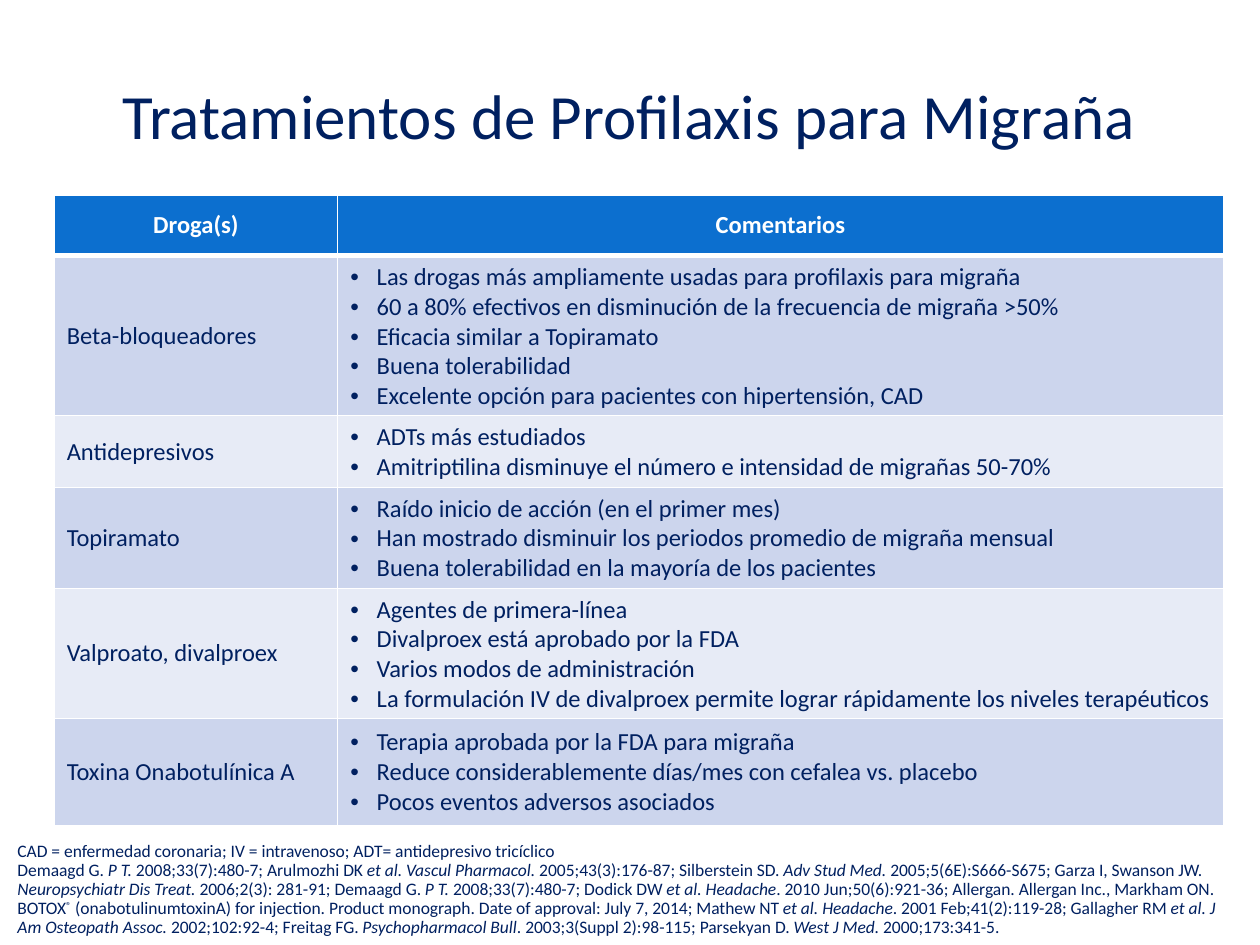
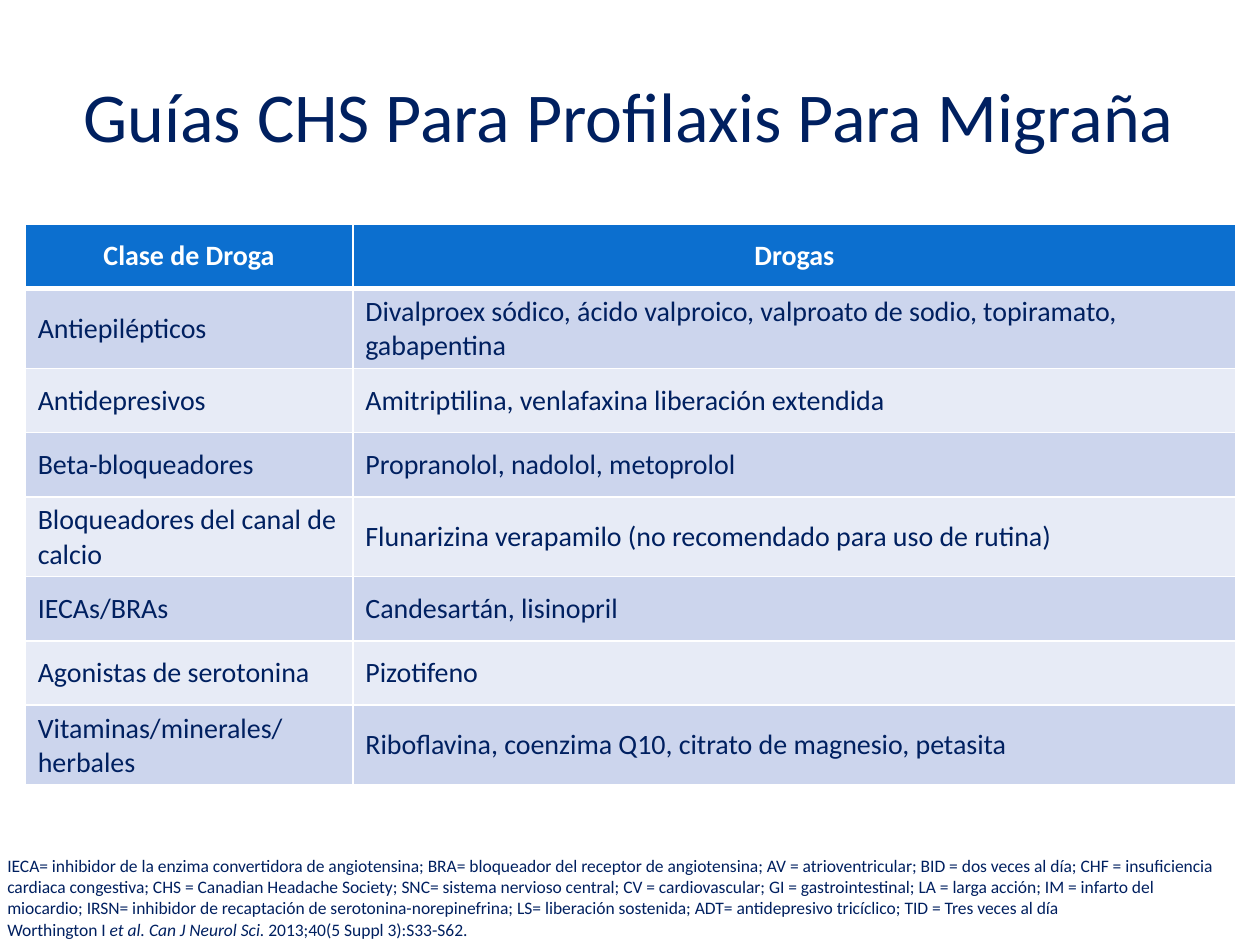
from lxml import etree
from pptx import Presentation
from pptx.dml.color import RGBColor
from pptx.enum.text import MSO_ANCHOR, PP_ALIGN
from pptx.oxml.ns import qn
from pptx.util import Inches, Pt

FONT = "Calibri"
NAVY = RGBColor(0x00, 0x20, 0x60)
WHITE = RGBColor(0xFF, 0xFF, 0xFF)
HEADER_BLUE = RGBColor(0x0C, 0x6F, 0xCF)
BANDS = [RGBColor(0xCC, 0xD5, 0xED), RGBColor(0xE7, 0xEB, 0xF6)]
TITLE_BOX = (0.49, 0.28, 9, 1.25)
BULLET_INDENT = 0.21
NOTE_SIZE = 10

# In notes, asterisks delimit italic text.
TREATMENTS = {
    "title": "Tratamientos de Profilaxis para Migraña",
    "title_size": 36,
    "table_at": (0.43, 1.55),
    "columns": [2.25, 7.03],
    "row_heights": [0.48, 1.27, 0.57, 0.8, 1.03, 0.85],
    "table_size": 14,
    "header": ("Droga(s)", "Comentarios"),
    "rows": [
        ("Beta-bloqueadores", [
            "Las drogas más ampliamente usadas para profilaxis para migraña",
            "60 a 80% efectivos en disminución de la frecuencia de migraña >50%",
            "Eficacia similar a Topiramato",
            "Buena tolerabilidad",
            "Excelente opción para pacientes con hipertensión, CAD",
        ]),
        ("Antidepresivos", [
            "ADTs más estudiados",
            "Amitriptilina disminuye el número e intensidad de migrañas 50-70%",
        ]),
        ("Topiramato", [
            "Raído inicio de acción (en el primer mes)",
            "Han mostrado disminuir los periodos promedio de migraña mensual",
            "Buena tolerabilidad en la mayoría de los pacientes",
        ]),
        ("Valproato, divalproex", [
            "Agentes de primera-línea",
            "Divalproex está aprobado por la FDA",
            "Varios modos de administración",
            "La formulación IV de divalproex permite lograr rápidamente los niveles terapéuticos",
        ]),
        ("Toxina Onabotulínica A", [
            "Terapia aprobada por la FDA para migraña",
            "Reduce considerablemente días/mes con cefalea vs. placebo",
            "Pocos eventos adversos asociados",
        ]),
    ],
    "note_box": (0.04, 6.64, 9.85, 0.86),
    "note_spacing": 0.9,
    "notes": [
        "CAD = enfermedad coronaria; IV = intravenoso; ADT= antidepresivo tricíclico",
        "Demaagd G. *P T.* 2008;33(7):480-7; Arulmozhi DK *et al. Vascul Pharmacol.* "
        "2005;43(3):176-87; Silberstein SD. *Adv Stud Med. *2005;5(6E):S666-S675; "
        "Garza I, Swanson JW. *Neuropsychiatr Dis Treat.* 2006;2(3): 281-91; "
        "Demaagd G. *P T.* 2008;33(7):480-7; Dodick DW *et al. Headache*. "
        "2010 Jun;50(6):921-36; Allergan. Allergan Inc., Markham ON. "
        "BOTOX® (onabotulinumtoxinA) for injection. Product monograph. "
        "Date of approval: July 7, 2014; Mathew NT *et al. Headache*. "
        "2001 Feb;41(2):119-28; Gallagher RM *et al. J Am Osteopath Assoc. *"
        "2002;102:92-4; Freitag FG. *Psychopharmacol Bull*. "
        "2003;3(Suppl 2):98-115; Parsekyan D. *West J Med. *2000;173:341-5.",
    ],
}

GUIDELINES = {
    "title": "Guías CHS Para Profilaxis Para Migraña",
    "title_size": 40,
    "table_at": (0.2, 1.78),
    "columns": [2.6, 7.01],
    "row_heights": [0.51] * 8,
    "table_size": 16,
    "header": ("Clase de Droga", "Drogas"),
    "rows": [
        ("Antiepilépticos",
         "Divalproex sódico, ácido valproico, valproato de sodio, topiramato, gabapentina"),
        ("Antidepresivos", "Amitriptilina, venlafaxina liberación extendida"),
        ("Beta-bloqueadores", "Propranolol, nadolol, metoprolol"),
        ("Bloqueadores del canal de calcio",
         "Flunarizina verapamilo (no recomendado para uso de rutina)"),
        ("IECAs/BRAs", "Candesartán, lisinopril"),
        ("Agonistas de serotonina", "Pizotifeno"),
        ("Vitaminas/minerales/herbales",
         "Riboflavina, coenzima Q10, citrato de magnesio, petasita"),
    ],
    "note_box": (-0.04, 6.74, 9.86, 0.77),
    "note_spacing": 1.0,
    "notes": [
        "IECA= inhibidor de la enzima convertidora de angiotensina; "
        "BRA= bloqueador del receptor de angiotensina; AV = atrioventricular; "
        "BID = dos veces al día; CHF = insuficiencia cardiaca congestiva; "
        "CHS = Canadian Headache Society; SNC= sistema nervioso central; "
        "CV = cardiovascular; GI = gastrointestinal; LA = larga acción; "
        "IM = infarto del miocardio; IRSN= inhibidor de recaptación de "
        "serotonina-norepinefrina; LS= liberación sostenida; "
        "ADT= antidepresivo tricíclico; TID = Tres veces al día",
        "Worthington I *et al. Can J Neurol Sci. *2013;40(5 Suppl 3):S33-S62.",
    ],
}


def add_run(paragraph, text, size, color=NAVY, bold=False, italic=False):
    run = paragraph.add_run()
    run.text = text
    font = run.font
    font.name, font.size, font.bold, font.italic = FONT, Pt(size), bold, italic
    font.color.rgb = color
    return run


def paragraphs_for(text_frame, items):
    for index, item in enumerate(items):
        paragraph = text_frame.add_paragraph() if index else text_frame.paragraphs[0]
        yield paragraph, item


def add_text_frame(slide, box):
    text_frame = slide.shapes.add_textbox(*map(Inches, box)).text_frame
    text_frame.word_wrap = True
    return text_frame


def add_title(slide, text, size):
    text_frame = add_text_frame(slide, TITLE_BOX)
    text_frame.vertical_anchor = MSO_ANCHOR.MIDDLE
    paragraph = text_frame.paragraphs[0]
    paragraph.alignment = PP_ALIGN.CENTER
    add_run(paragraph, text, size)


def add_notes(slide, content):
    text_frame = add_text_frame(slide, content["note_box"])
    for paragraph, note in paragraphs_for(text_frame, content["notes"]):
        paragraph.line_spacing = content["note_spacing"]
        for index, section in enumerate(note.split("*")):
            for piece in filter(None, section.partition("®")):
                run = add_run(paragraph, piece, NOTE_SIZE, italic=index % 2 == 1)
                if piece == "®":
                    run._r.get_or_add_rPr().set("baseline", "30000")


def add_bullet(paragraph):
    properties = paragraph._p.get_or_add_pPr()
    properties.set("marL", str(Inches(BULLET_INDENT)))
    properties.set("indent", str(-Inches(BULLET_INDENT)))
    etree.SubElement(properties, qn("a:buFont")).set("typeface", "Arial")
    etree.SubElement(properties, qn("a:buChar")).set("char", "•")


def set_borders(cell, top, bottom):
    properties = cell._tc.get_or_add_tcPr()
    for side, width in (("L", 1), ("R", 1), ("T", top), ("B", bottom)):
        line = etree.SubElement(properties, qn(f"a:ln{side}"), w=str(Pt(width)))
        fill = etree.SubElement(line, qn("a:solidFill"))
        etree.SubElement(fill, qn("a:srgbClr")).set("val", str(WHITE))


def fill_cell(cell, content, row_index, size):
    is_header = row_index == 0
    set_borders(cell, 3 if row_index == 1 else 1, 3 if is_header else 1)
    cell.fill.solid()
    cell.fill.fore_color.rgb = HEADER_BLUE if is_header else BANDS[(row_index - 1) % 2]
    cell.vertical_anchor = MSO_ANCHOR.MIDDLE
    bulleted = isinstance(content, list)
    for paragraph, text in paragraphs_for(cell.text_frame, content if bulleted else [content]):
        if bulleted:
            add_bullet(paragraph)
        if is_header:
            paragraph.alignment = PP_ALIGN.CENTER
        add_run(paragraph, text, size, WHITE if is_header else NAVY, bold=is_header)


def add_drug_table(slide, content):
    rows = [content["header"], *content["rows"]]
    widths, heights = content["columns"], content["row_heights"]
    box = (*content["table_at"], sum(widths), sum(heights))
    table = slide.shapes.add_table(len(rows), len(widths), *map(Inches, box)).table
    for column, width in zip(table.columns, widths):
        column.width = Inches(width)
    for row, height in zip(table.rows, heights):
        row.height = Inches(height)
    for row_index, row in enumerate(rows):
        for column_index, cell_content in enumerate(row):
            fill_cell(table.cell(row_index, column_index), cell_content,
                      row_index, content["table_size"])


def main():
    presentation = Presentation()
    presentation.slide_width, presentation.slide_height = Inches(10), Inches(7.5)
    for content in (TREATMENTS, GUIDELINES):
        slide = presentation.slides.add_slide(presentation.slide_layouts[6])
        add_title(slide, content["title"], content["title_size"])
        add_drug_table(slide, content)
        add_notes(slide, content)
    presentation.save("out.pptx")


if __name__ == "__main__":
    main()
